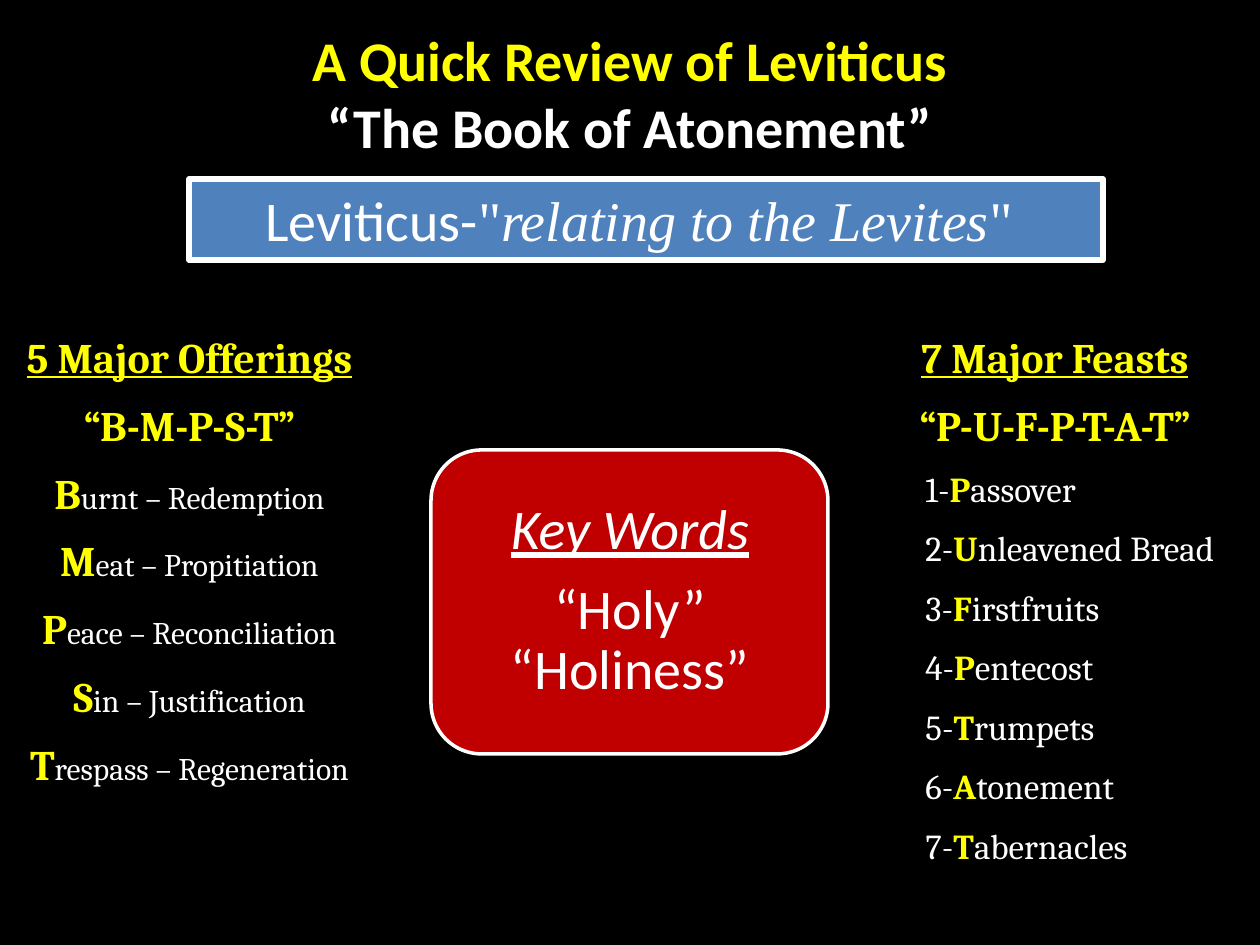
"""Build the Leviticus review slide."""
from copy import deepcopy

from lxml.etree import fromstring
from pptx import Presentation
from pptx.dml.color import RGBColor as RGB
from pptx.enum.shapes import MSO_SHAPE as SHAPE
from pptx.enum.text import MSO_ANCHOR as ANCHOR, MSO_AUTO_SIZE as AUTO, PP_ALIGN as ALIGN
from pptx.util import Pt

COLORS = {"black": "000000", "white": "FFFFFF", "yellow": "FFFF00", "blue": "4F81BD", "red": "C00000"}

STYLES = {
    "title": ("Calibri", 32, "yellow", {"bold": True}),
    "subtitle": ("Calibri", 32, "white", {"bold": True}),
    "big": ("Calibri", 32, "white", {}),
    "key": ("Calibri", 32, "white", {"italic": True, "underline": True}),
    "quote": ("Times New Roman", 32, "white", {}),
    "meaning": ("Times New Roman", 32, "white", {"italic": True}),
    "heading": ("Cambria", 24, "yellow", {"bold": True, "underline": True}),
    "initial": ("Cambria", 24, "yellow", {"bold": True}),
    "offering": ("Cambria", 18, "white", {}),
    "feast": ("Cambria", 20, "white", {}),
    "feast initial": ("Cambria", 20, "yellow", {"bold": True}),
}

TITLE = [("A Quick Review of Leviticus", "title"), ("“The Book of Atonement”", "subtitle")]
BANNER = [("Leviticus-", "big"), ('"', "quote"), ("relating to the Levites", "meaning"), ('" ', "quote")]
KEY_WORDS = [("Key Words", "key"), ("“Holy” “Holiness”", "big")]
OFFERINGS = ["Burnt – Redemption", "Meat – Propitiation", "Peace – Reconciliation",
             "Sin – Justification", "Trespass – Regeneration"]
FEASTS = ["Passover", "Unleavened Bread", "Firstfruits", "Pentecost", "Trumpets", "Atonement", "Tabernacles"]
HEADINGS = {"offerings": ("5 Major Offerings", "“B-M-P-S-T”"), "feasts": ("7 Major Feasts", "“P-U-F-P-T-A-T”")}

BOXES = {
    "title": (63, 6, 1134, 173),
    "banner": (189, 179, 914, 81),
    "offerings": (0, 325, 379, 472),
    "feasts": (850, 325, 410, 553),
    "card": (431, 450, 397, 304),
    "key words": (446, 465, 368, 273),
}

SHADOW = """<a:effectLst xmlns:a="http://schemas.openxmlformats.org/drawingml/2006/main">
<a:outerShdw blurRad="40000" dist="20000" dir="5400000" rotWithShape="0">
<a:srgbClr val="000000"><a:alpha val="38000"/></a:srgbClr></a:outerShdw></a:effectLst>"""


def px(n):
    return round(n * 914400 / 126)


def box(name):
    return [px(n) for n in BOXES[name]]


def color(name):
    return RGB.from_string(COLORS[name])


def add_run(p, text, style):
    r = p.add_run()
    r.text = text
    name, size, fill, flags = STYLES[style]
    for key, value in {"name": name, "size": Pt(size), **flags}.items():
        setattr(r.font, key, value)
    r.font.color.rgb = color(fill)
    return r


def add_text(sp, paragraphs, **formats):
    tf = sp.text_frame
    tf.word_wrap = True
    tf.vertical_anchor = ANCHOR.TOP
    for i, runs in enumerate(paragraphs):
        p = tf.add_paragraph() if i else tf.paragraphs[0]
        for key, value in {"alignment": ALIGN.CENTER, **formats}.items():
            setattr(p, key, value)
        for text, style in runs:
            add_run(p, text, style)
    return tf


def add_panel(shapes, kind, name, fill, line, width):
    sp = shapes.add_shape(kind, *box(name))
    sp.shadow.inherit = False
    if fill:
        sp.fill.solid()
        sp.fill.fore_color.rgb = color(fill)
    else:
        sp.fill.background()
    sp.line.color.rgb = color(line)
    sp.line.width = Pt(width)
    return sp


def headings(name):
    return [[(text, style)] for text, style in zip(HEADINGS[name], ("heading", "initial"))]


def main():
    prs = Presentation()
    prs.slide_width, prs.slide_height = px(1260), px(945)
    s = prs.slides.add_slide(prs.slide_layouts[5])
    s.background.fill.solid()
    s.background.fill.fore_color.rgb = color("black")

    title = s.shapes.title
    title.left, title.top, title.width, title.height = box("title")
    tf = title.text_frame
    tf.auto_size = AUTO.NONE
    tf.vertical_anchor = ANCHOR.MIDDLE
    p = tf.paragraphs[0]
    p.alignment = ALIGN.CENTER
    r = add_run(p, *TITLE[0])
    p.add_line_break()
    p._p[-1].append(deepcopy(r._r.rPr))
    add_run(p, *TITLE[1])

    offerings = add_panel(s.shapes, SHAPE.RECTANGLE, "offerings", None, "black", 0.75)
    rows = [[(text[0], "initial"), (text[1:], "offering")] for text in OFFERINGS]
    add_text(offerings, headings("offerings") + rows, space_after=Pt(10))

    feasts = s.shapes.add_textbox(*box("feasts"))
    rows = [[(f"{i}-", "feast"), (text[0], "feast initial"), (text[1:], "feast")]
            for i, text in enumerate(FEASTS, 1)]
    tf = add_text(feasts, headings("feasts") + rows, space_after=Pt(10))
    for p in tf.paragraphs[2:]:
        p.level, p.alignment = 1, ALIGN.LEFT

    banner = add_panel(s.shapes, SHAPE.RECTANGLE, "banner", "blue", "white", 3)
    sp_pr = banner._element.spPr
    sp_pr.replace(sp_pr[-1], fromstring(SHADOW))
    add_text(banner, [BANNER])

    group = s.shapes.add_group_shape()
    add_panel(group.shapes, SHAPE.ROUNDED_RECTANGLE, "card", "red", "white", 2)
    words = group.shapes.add_textbox(*box("key words"))
    tf = add_text(words, [[run] for run in KEY_WORDS], line_spacing=0.9, space_after=Pt(11.2))
    tf.vertical_anchor = ANCHOR.MIDDLE
    for side in ("left", "top", "right", "bottom"):
        setattr(tf, f"margin_{side}", px(16))

    prs.save("out.pptx")


if __name__ == "__main__":
    main()
